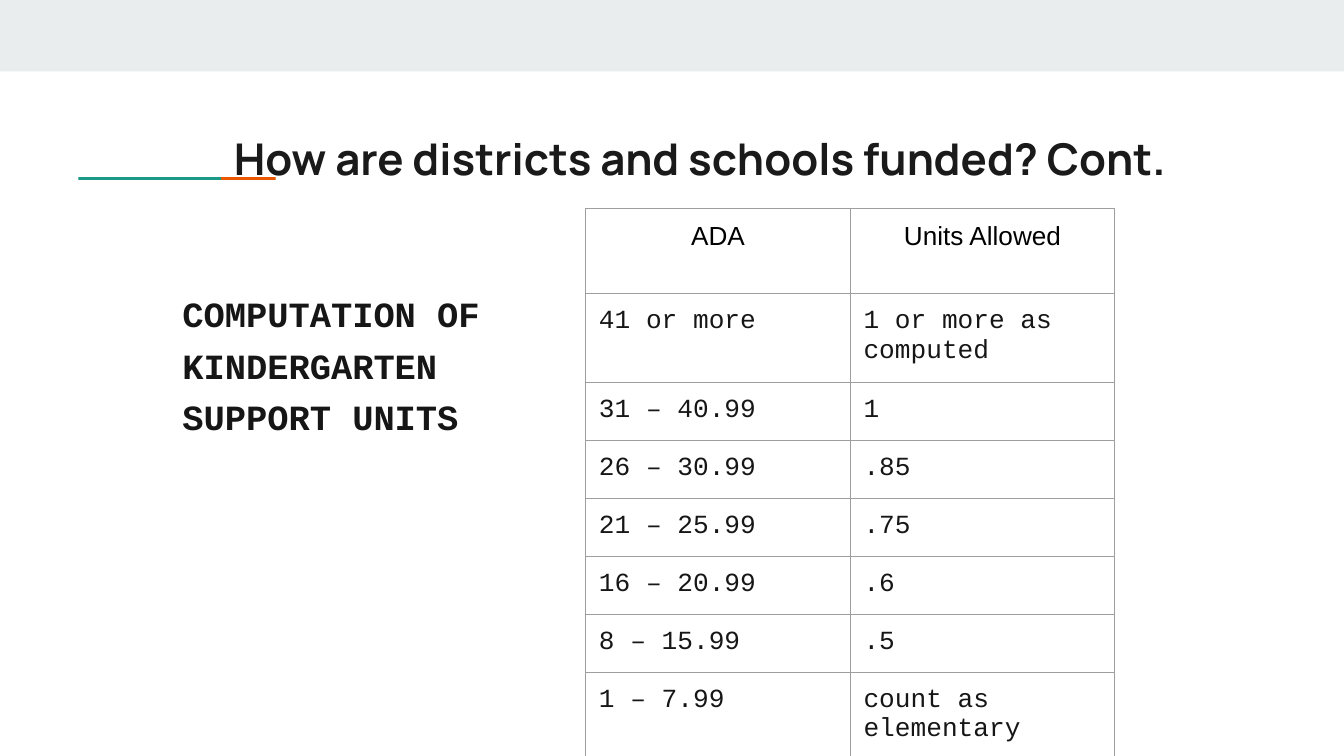
from dataclasses import dataclass

from lxml import etree
from pptx import Presentation
from pptx.dml.color import RGBColor
from pptx.enum import shapes, text
from pptx.oxml import ns
from pptx.util import Cm, Pt

BAND = RGBColor(0xE9, 0xED, 0xEE)
ORANGE = RGBColor(0xEB, 0x56, 0x00)
TEAL = RGBColor(0x1A, 0x99, 0x88)
TITLE_INK = RGBColor(0x1A, 0x1A, 0x1A)
BODY_INK = RGBColor(0x16, 0x16, 0x16)
BLACK = RGBColor(0, 0, 0)
GRID = RGBColor(0x9E, 0x9E, 0x9E)
INSET = Cm(0.25)


@dataclass
class Bar:
    left: float
    top: float
    width: float
    height: float
    color: RGBColor


@dataclass
class Label:
    words: str
    left: float
    top: float
    width: float
    height: float
    font: dict
    line_spacing: float = 1.0


@dataclass
class SupportRow:
    ada: str
    units: str
    height: float = 1.07


BARS = [
    Bar(0, 0, 25.4, 1.35, BAND),
    Bar(2.51, 3.35, 2.7, 0.05, ORANGE),
    Bar(1.48, 3.35, 2.7, 0.05, TEAL),
]

LABELS = [
    Label("How are districts and schools funded? Cont.", 4.17, 2.24, 21.36, 1.5,
          {"name": "Manrope", "size": Pt(23.4), "bold": True}),
    Label("COMPUTATION OF KINDERGARTEN SUPPORT UNITS", 3.2, 5.11, 6.83, 7.44,
          {"name": "Courier New", "size": Pt(19), "bold": True}, 1.21),
]
LABEL_INKS = [TITLE_INK, BODY_INK]

HEADER_FONT = {"name": "Arial", "size": Pt(14), "bold": False}
ENTRY_FONT = {"name": "Courier New", "size": Pt(14), "bold": False}

ROWS = [
    SupportRow("ADA", "Units Allowed", 1.61),
    SupportRow("41 or more", "1 or more as computed", 1.65),
    SupportRow("31 – 40.99", "1"),
    SupportRow("26 – 30.99", ".85"),
    SupportRow("21 – 25.99", ".75"),
    SupportRow("16 – 20.99", ".6"),
    SupportRow("8 – 15.99", ".5"),
    SupportRow("1 – 7.99", "count as elementary", 1.65),
]


def apply(target, values: dict) -> None:
    for key, value in values.items():
        setattr(target, key, value)


def set_insets(holder) -> None:
    apply(holder, {f"margin_{side}": INSET for side in ("left", "top", "right", "bottom")})


def write(paragraph, words: str, font: dict, ink: RGBColor) -> None:
    run = paragraph.add_run()
    run.text = words
    apply(run.font, font)
    run.font.color.rgb = ink


def draw_bar(slide, bar: Bar) -> None:
    strip = slide.shapes.add_shape(
        shapes.MSO_SHAPE.RECTANGLE,
        Cm(bar.left), Cm(bar.top), Cm(bar.width), Cm(bar.height))
    strip.shadow.inherit = False
    strip.fill.solid()
    strip.fill.fore_color.rgb = bar.color
    strip.line.fill.background()


def draw_label(slide, label: Label, ink: RGBColor) -> None:
    frame = slide.shapes.add_textbox(
        Cm(label.left), Cm(label.top), Cm(label.width), Cm(label.height)).text_frame
    frame.word_wrap = True
    set_insets(frame)
    paragraph = frame.paragraphs[0]
    paragraph.line_spacing = label.line_spacing
    write(paragraph, label.words, label.font, ink)


def outline_cell(cell) -> None:
    properties = cell._tc.get_or_add_tcPr()
    for side in ("lnL", "lnR", "lnT", "lnB"):
        line = etree.SubElement(properties, ns.qn(f"a:{side}"), w=str(Pt(0.75)))
        fill = etree.SubElement(line, ns.qn("a:solidFill"))
        etree.SubElement(fill, ns.qn("a:srgbClr"), val=str(GRID))


def draw_support_table(slide, rows: list[SupportRow]) -> None:
    total = sum(row.height for row in rows)
    table = slide.shapes.add_table(
        len(rows), 2, Cm(11.07), Cm(3.94), Cm(10), Cm(total)).table
    apply(table, {"first_row": False, "horz_banding": False})
    for column in table.columns:
        column.width = Cm(5)
    for r, row in enumerate(rows):
        table.rows[r].height = Cm(row.height)
        for c, words in enumerate((row.ada, row.units)):
            cell = table.cell(r, c)
            set_insets(cell)
            outline_cell(cell)
            cell.fill.background()
            paragraph = cell.text_frame.paragraphs[0]
            if r == 0:
                paragraph.alignment = text.PP_ALIGN.CENTER
                write(paragraph, words, HEADER_FONT, BLACK)
            else:
                write(paragraph, words, ENTRY_FONT, BODY_INK)


def main() -> None:
    deck = Presentation()
    apply(deck, {"slide_width": Cm(25.4), "slide_height": Cm(14.29)})
    slide = deck.slides.add_slide(deck.slide_layouts[6])

    # Top band and the two-colour accent line
    for bar in BARS:
        draw_bar(slide, bar)

    # Title and side heading
    for label, ink in zip(LABELS, LABEL_INKS):
        draw_label(slide, label, ink)

    # Kindergarten support units by attendance
    draw_support_table(slide, ROWS)

    deck.save("out.pptx")


if __name__ == "__main__":
    main()
